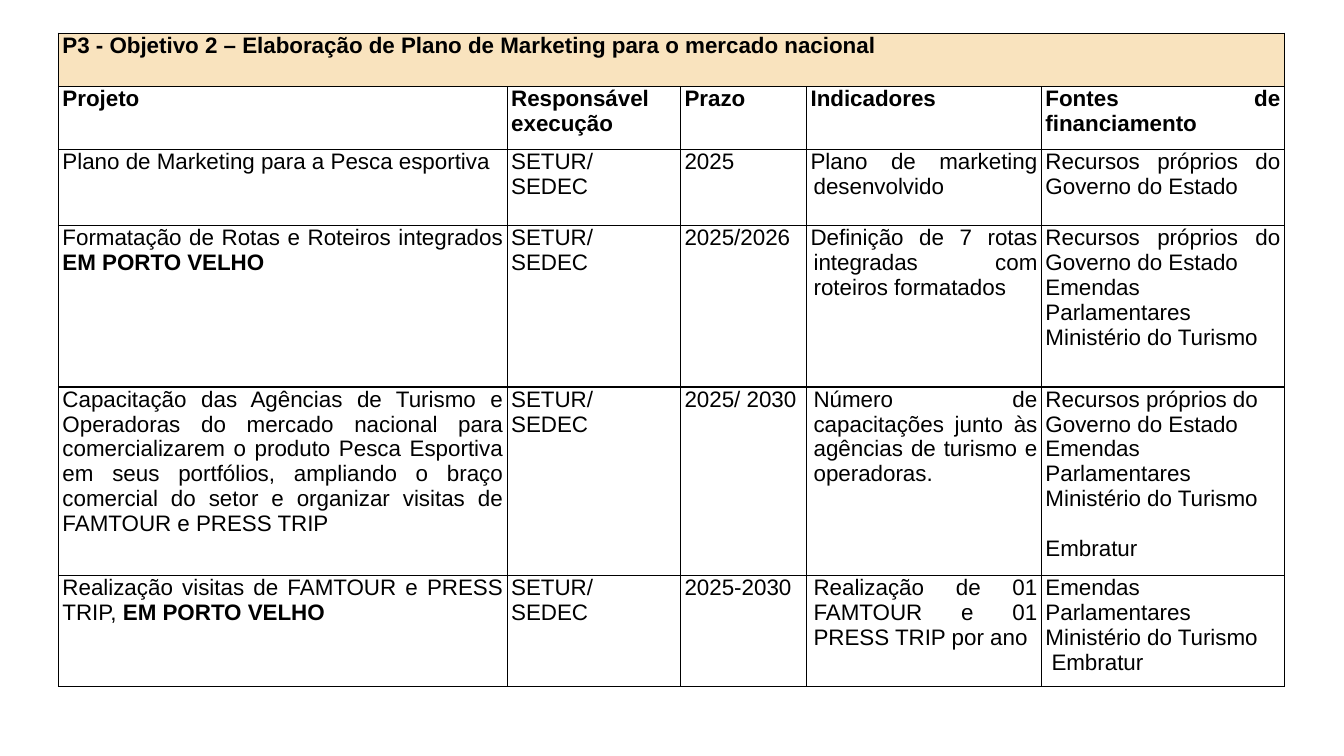
"""Builds the marketing plan slide with its table of projects."""
import pptx
import pptx.dml.color
import pptx.enum.text
import pptx.oxml
import pptx.oxml.ns
import pptx.util
from pptx.util import Inches

BLACK = pptx.dml.color.RGBColor(0x00, 0x00, 0x00)
SAND = pptx.dml.color.RGBColor(0xF9, 0xE3, 0xBE)

TITLE = "P3 - Objetivo 2 – Elaboração de Plano de Marketing para o mercado nacional"
COLUMN_WIDTHS = [4.45, 1.72, 1.25, 2.33, 2.41]
ROW_HEIGHTS = [0.53, 0.62, 0.76, 1.6, 1.87, 1.1]
HEADERS = ["Projeto", "Responsável execução", "Prazo", "Indicadores",
           "Fontes de financiamento"]
OWNERS = "SETUR/\nSEDEC"
STATE = "Recursos próprios do Governo do Estado"
GRANTS = "Emendas Parlamentares\nMinistério do Turismo"
PROJECTS = [
    ["Plano de Marketing para a Pesca esportiva", OWNERS, "2025",
     "Plano de marketing desenvolvido", STATE],
    ["Formatação de Rotas e Roteiros integrados **EM PORTO VELHO", OWNERS, "2025/2026",
     "Definição de 7 rotas integradas com roteiros formatados", f"{STATE}\n{GRANTS}"],
    ["Capacitação das Agências de Turismo e Operadoras do mercado nacional para "
     "comercializarem o produto Pesca Esportiva em seus portfólios, ampliando o braço "
     "comercial do setor e organizar visitas de FAMTOUR e PRESS TRIP", OWNERS, "2025/ 2030",
     "Número de capacitações junto às agências de turismo e operadoras.",
     f"Recursos próprios do\nGoverno do Estado\n{GRANTS}\nEmbratur"],
    ["Realização visitas de FAMTOUR e PRESS TRIP, **EM PORTO VELHO", OWNERS, "2025-2030",
     "Realização de 01 FAMTOUR e 01 PRESS TRIP por ano", f"{GRANTS}\nEmbratur"],
]


class Deck:
    """Holds the style and the current slide."""

    font = "Arial"
    size = pptx.util.Pt(16)
    border = pptx.util.Pt(1)

    def __init__(self):
        self.prs = pptx.Presentation()
        self.prs.slide_width = Inches(13.33)
        self.prs.slide_height = Inches(7.5)
        self.s = self.prs.slides.add_slide(self.prs.slide_layouts[6])

    def table(self, left, top, widths, heights):
        """Adds an unfilled table with thin borders."""
        frame = self.s.shapes.add_table(len(heights), len(widths), Inches(left), Inches(top),
                                        Inches(sum(widths)), Inches(sum(heights)))
        table = frame.table
        table.first_row = table.horz_banding = False
        for column, width in zip(table.columns, widths):
            column.width = Inches(width)
        for row, height in zip(table.rows, heights):
            row.height = Inches(height)
        for cell in table.iter_cells():
            cell.margin_left = cell.margin_right = Inches(0.04)
            cell.margin_top = cell.margin_bottom = 0
            self.borders(cell)
            cell.fill.background()
        return table

    def borders(self, cell):
        """Draws all four sides of a cell."""
        tcPr = cell._tc.get_or_add_tcPr()
        for side in ("lnL", "lnR", "lnT", "lnB"):
            tcPr.append(pptx.oxml.parse_xml(
                f'<a:{side} {pptx.oxml.ns.nsdecls("a")} w="{self.border}"><a:solidFill>'
                f'<a:srgbClr val="{BLACK}"/></a:solidFill></a:{side}>'))

    def cell_text(self, cell, text, bold=False):
        """Sets justified lines, with bold text after a double star."""
        tf = cell.text_frame
        for i, line in enumerate(text.split("\n")):
            p = tf.add_paragraph() if i else tf.paragraphs[0]
            plain, _, strong = line.partition("**")
            p.text = plain
            if strong:
                p.add_run().text = strong
            p.alignment = pptx.enum.text.PP_ALIGN.JUSTIFY
            for j, r in enumerate(p.runs):
                r.font.name = self.font
                r.font.size = self.size
                r.font.color.rgb = BLACK
                r.font.bold = bold or j > 0

    def indent(self, p, left, first=0):
        """Sets the left and first-line indents of a paragraph."""
        pPr = p._p.get_or_add_pPr()
        pPr.set("marL", str(Inches(left)))
        pPr.set("indent", str(Inches(first)))


def main():
    deck = Deck()
    table = deck.table(0.58, 0.33, COLUMN_WIDTHS, ROW_HEIGHTS)
    title = table.cell(0, 0)
    title.merge(table.cell(0, len(HEADERS) - 1))
    title.fill.solid()
    title.fill.fore_color.rgb = SAND
    deck.cell_text(title, TITLE, bold=True)
    for row, texts in enumerate([HEADERS] + PROJECTS, start=1):
        for column, text in enumerate(texts):
            deck.cell_text(table.cell(row, column), text, bold=row == 1)
    for row in range(2, len(ROW_HEIGHTS)):
        indicator = table.cell(row, 3).text_frame.paragraphs[0]
        deck.indent(indicator, 0.03, -0.03 if row < 4 else 0)
    table.cell(4, 4).text_frame.paragraphs[-1].space_before = pptx.util.Pt(18)
    deck.indent(table.cell(5, 4).text_frame.paragraphs[-1], 0.06)
    deck.prs.save("out.pptx")


if __name__ == "__main__":
    main()
